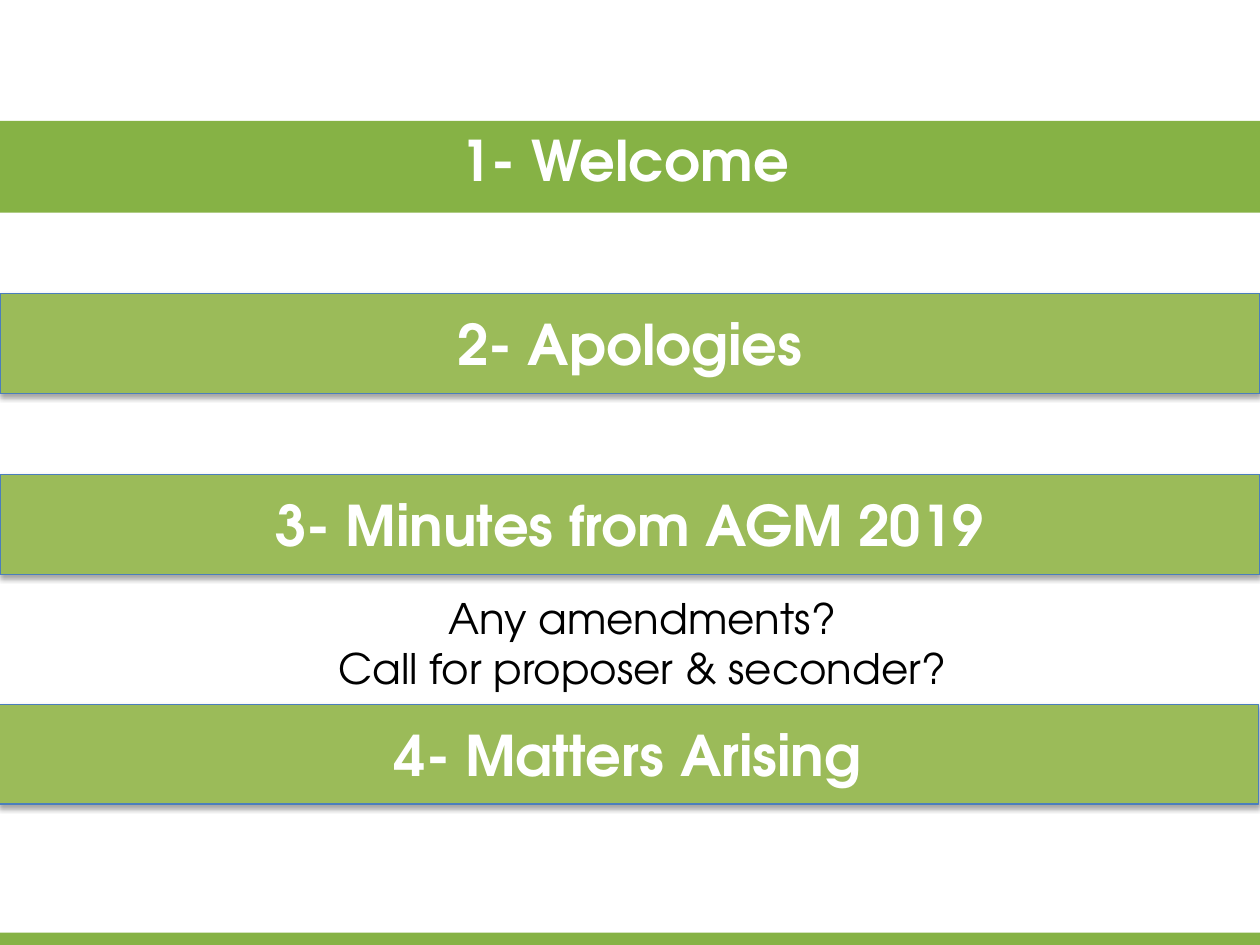
from lxml import etree
from pptx import Presentation
from pptx.dml.color import RGBColor
from pptx.enum.shapes import MSO_SHAPE
from pptx.enum.text import MSO_ANCHOR, PP_ALIGN
from pptx.oxml.ns import qn
from pptx.util import Cm, Pt

FONT = "TeX Gyre Adventor"
BRAND_GREEN = RGBColor(0x86, 0xB2, 0x45)
ITEM_GREEN = RGBColor(0x9B, 0xBB, 0x59)
OUTLINE_BLUE = RGBColor(0x4B, 0x7E, 0xBC)
WHITE = RGBColor(0xFF, 0xFF, 0xFF)
BLACK = RGBColor(0, 0, 0)

# Content; positions and sizes in cm
WIDTH, HEIGHT = 25.4, 19.05
TITLE = "1- Welcome"
BRAND_BANDS = [(2.44, 1.85), (18.8, 0.25)]  # top, height
ITEM_HEIGHT = 2.01
AGENDA_ITEMS = [  # text, left, top
    ("2- Apologies", 0, 5.92),
    ("3- Minutes from AGM 2019", 0, 9.57),
    ("4- Matters Arising", -0.03, 14.2),
]
QUESTIONS = ["Any amendments?", "Call for proposer & seconder?"]


def write(frame, lines, size, color, bold=False):
    frame.word_wrap = True
    frame.text = "\n".join(lines)
    for paragraph in frame.paragraphs:
        paragraph.alignment = PP_ALIGN.CENTER
        for run in paragraph.runs:
            run.font.name = FONT
            run.font.size = Pt(size)
            run.font.bold = bold
            run.font.color.rgb = color


def add_band(slide, left, top, height, fill):
    band = slide.shapes.add_shape(
        MSO_SHAPE.RECTANGLE, Cm(left), Cm(top), Cm(WIDTH), Cm(height))
    band.fill.solid()
    band.fill.fore_color.rgb = fill
    band.line.fill.background()
    band.shadow.inherit = False
    return band


def add_drop_shadow(shape):
    effects = shape.element.spPr.find(qn("a:effectLst"))
    shadow = etree.SubElement(
        effects, qn("a:outerShdw"), blurRad=str(Pt(3.1)), dist=str(Pt(1.8)),
        dir="5400000", rotWithShape="0")
    color = etree.SubElement(shadow, qn("a:srgbClr"), val=str(BLACK))
    etree.SubElement(color, qn("a:alpha"), val="35000")


def main():
    deck = Presentation()
    deck.slide_width, deck.slide_height = Cm(WIDTH), Cm(HEIGHT)
    slide = deck.slides.add_slide(deck.slide_layouts[6])

    # Title band and footer band
    for top, height in BRAND_BANDS:
        add_band(slide, 0, top, height, BRAND_GREEN)

    # Title
    title = slide.shapes.add_textbox(Cm(1.5), Cm(2.13), Cm(22.2), Cm(2.16))
    title_frame = title.text_frame
    title_frame.margin_left = title_frame.margin_right = 0
    title_frame.vertical_anchor = MSO_ANCHOR.MIDDLE
    write(title_frame, [TITLE], 32, WHITE, bold=True)

    # Agenda items
    for text, left, top in AGENDA_ITEMS:
        item = add_band(slide, left, top, ITEM_HEIGHT, ITEM_GREEN)
        item.line.color.rgb = OUTLINE_BLUE
        item.line.width = Pt(0.75)
        add_drop_shadow(item)
        item.text_frame.vertical_anchor = MSO_ANCHOR.MIDDLE
        write(item.text_frame, [text], 32, WHITE, bold=True)

    # Questions on the minutes
    questions = slide.shapes.add_textbox(
        Cm(4.78), Cm(11.81), Cm(16.33), Cm(2.31))
    write(questions.text_frame, QUESTIONS, 24, BLACK)

    deck.save("out.pptx")


if __name__ == "__main__":
    main()
